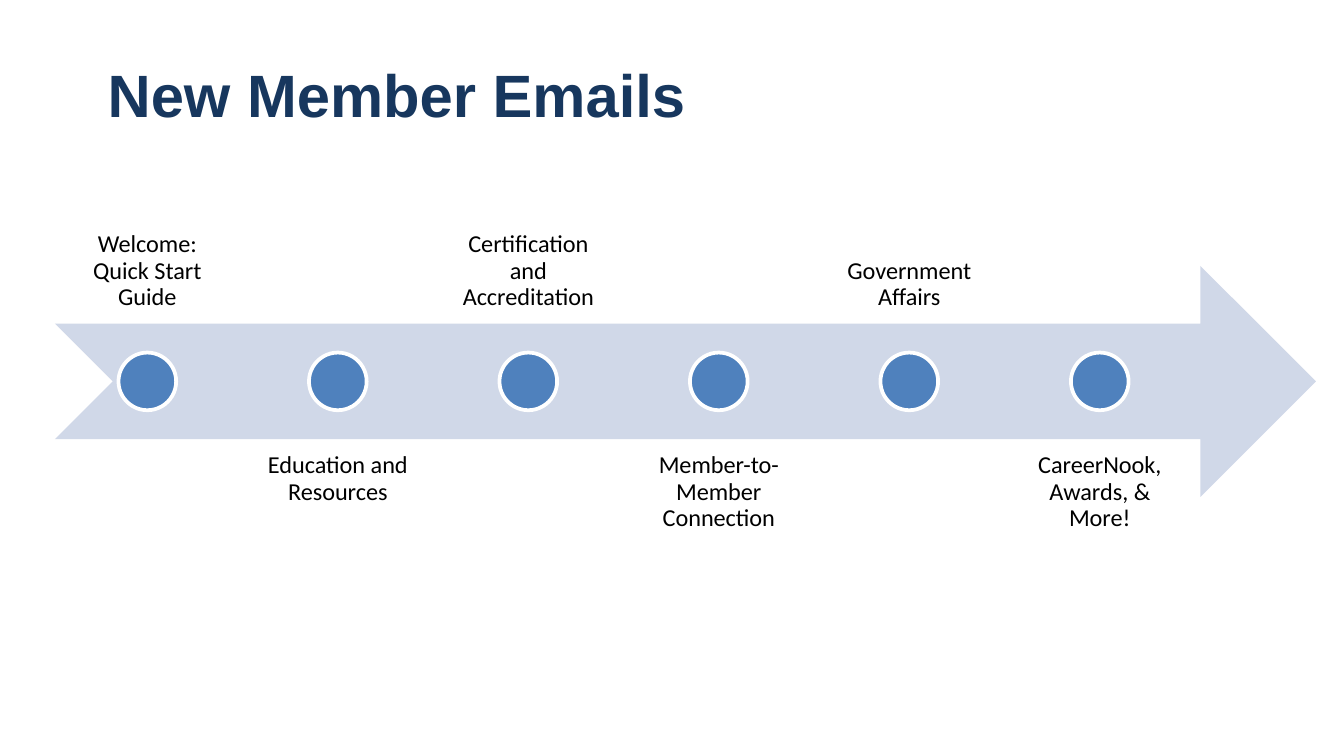
"""Build a timeline slide of the emails sent to new members."""
import pptx
import pptx.util
import pptx.dml.color
import pptx.enum.shapes
import pptx.enum.text

Cm, Pt = pptx.util.Cm, pptx.util.Pt
SHAPE = pptx.enum.shapes.MSO_SHAPE
ANCHOR = pptx.enum.text.MSO_ANCHOR
ALIGN = pptx.enum.text.PP_ALIGN

EMAILS = [
    "Welcome: Quick Start Guide",
    "Education and\u00a0Resources".replace("\u00a0", " "),
    "Certification and Accreditation",
    "Member-to-Member Connection",
    "Government Affairs",
    "CareerNook, Awards, & More!",
]
LEFT, STEP, WIDE, TALL = 1.07, 3.6, 3.43, 4.37
ABOVE, BELOW = 1.75, 8.31
MID, DOT = 7.21, 1.09


def color(code):
    """Return the colour for a hex string."""
    return pptx.dml.color.RGBColor.from_string(code)


def style(par, font, size, code, bold=False):
    """Format every run of a paragraph."""
    for run in par.runs:
        run.font.name = font
        run.font.size = Pt(size)
        run.font.bold = bold
        run.font.color.rgb = color(code)


def add_title(slide, text):
    """Place and fill the title."""
    title = slide.shapes.title
    title.left, title.top = Cm(1.78), Cm(0.58)
    title.width, title.height = Cm(22.35), Cm(2.39)
    frame = title.text_frame
    frame.text = text
    frame.vertical_anchor = ANCHOR.MIDDLE
    par = frame.paragraphs[0]
    par.alignment = ALIGN.LEFT
    style(par, "Arial", 32, "17375E", True)


def add_form(slide, kind, box, fill, line=None):
    """Add a filled preset shape, outlined if a line colour is given."""
    form = slide.shapes.add_shape(kind, *map(Cm, box))
    form.shadow.inherit = False
    form.fill.solid()
    form.fill.fore_color.rgb = color(fill)
    if line:
        form.line.color.rgb = color(line)
        form.line.width = Pt(2)
    else:
        form.line.fill.background()


def add_label(slide, text, left, top, anchor):
    """Add a centred email label."""
    frame = slide.shapes.add_textbox(
        Cm(left), Cm(top), Cm(WIDE), Cm(TALL)).text_frame
    frame.word_wrap = True
    frame.vertical_anchor = anchor
    frame.margin_left = frame.margin_right = Cm(0.25)
    frame.margin_top = frame.margin_bottom = Cm(0.25)
    frame.text = text
    par = frame.paragraphs[0]
    par.alignment = ALIGN.CENTER
    par.line_spacing = 0.9
    style(par, "Calibri", 13, "000000")


def main():
    """Build and save the slide."""
    deck = pptx.Presentation()
    deck.slide_width, deck.slide_height = Cm(25.4), Cm(14.29)
    slide = deck.slides.add_slide(deck.slide_layouts[5])
    add_title(slide, "New Member Emails")
    add_form(slide, SHAPE.NOTCHED_RIGHT_ARROW,
             (1.04, MID - TALL / 2, 23.83, TALL), "D0D8E8")
    for i, text in enumerate(EMAILS):
        left = LEFT + i * STEP
        top, anchor = (BELOW, ANCHOR.TOP) if i % 2 else (ABOVE, ANCHOR.BOTTOM)
        add_label(slide, text, left, top, anchor)
        add_form(slide, SHAPE.OVAL,
                 (left + (WIDE - DOT) / 2, MID - DOT / 2, DOT, DOT),
                 "4F81BD", "FFFFFF")
    deck.save("out.pptx")


if __name__ == "__main__":
    main()
